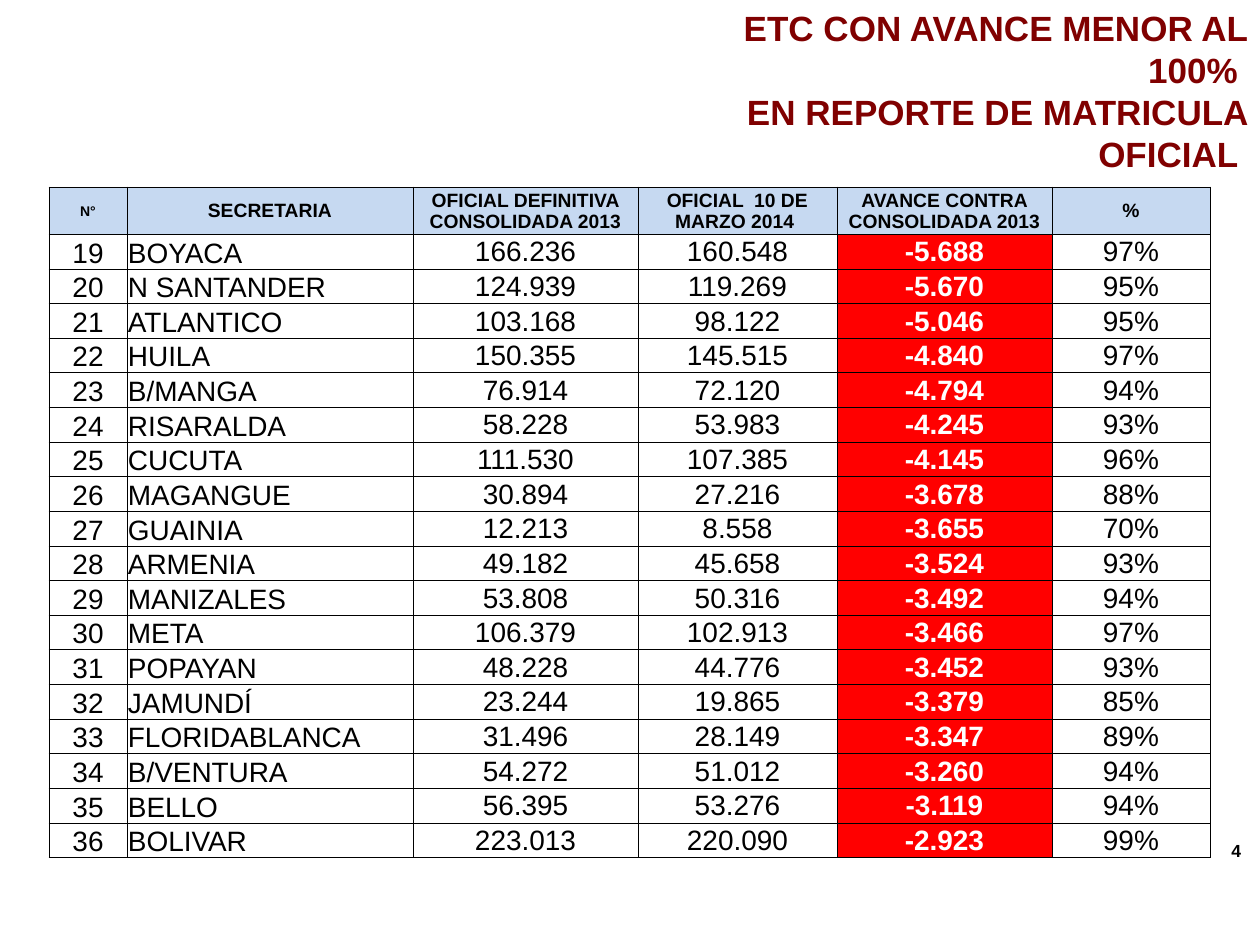
from lxml.etree import SubElement
from pptx import Presentation
from pptx.dml.color import RGBColor
from pptx.enum.text import MSO_ANCHOR, MSO_AUTO_SIZE, PP_ALIGN
from pptx.oxml.ns import qn
from pptx.util import Pt

TITLE = ["ETC CON AVANCE MENOR AL 100% ", "EN REPORTE DE MATRICULA OFICIAL "]
PAGE_NUMBER = "4 "
HEADERS = ["N°", "SECRETARIA", "OFICIAL DEFINITIVA CONSOLIDADA 2013",
           "OFICIAL  10 DE MARZO 2014 ", "AVANCE CONTRA CONSOLIDADA 2013", "%"]
FIRST_NUMBER = 19
SECRETARIES = [
    ("BOYACA", "166.236", "160.548", "-5.688", "97%"),
    ("N SANTANDER", "124.939", "119.269", "-5.670", "95%"),
    ("ATLANTICO", "103.168", "98.122", "-5.046", "95%"),
    ("HUILA", "150.355", "145.515", "-4.840", "97%"),
    ("B/MANGA", "76.914", "72.120", "-4.794", "94%"),
    ("RISARALDA", "58.228", "53.983", "-4.245", "93%"),
    ("CUCUTA", "111.530", "107.385", "-4.145", "96%"),
    ("MAGANGUE", "30.894", "27.216", "-3.678", "88%"),
    ("GUAINIA", "12.213", "8.558", "-3.655", "70%"),
    ("ARMENIA", "49.182", "45.658", "-3.524", "93%"),
    ("MANIZALES", "53.808", "50.316", "-3.492", "94%"),
    ("META", "106.379", "102.913", "-3.466", "97%"),
    ("POPAYAN", "48.228", "44.776", "-3.452", "93%"),
    ("JAMUNDÍ", "23.244", "19.865", "-3.379", "85%"),
    ("FLORIDABLANCA", "31.496", "28.149", "-3.347", "89%"),
    ("B/VENTURA", "54.272", "51.012", "-3.260", "94%"),
    ("BELLO", "56.395", "53.276", "-3.119", "94%"),
    ("BOLIVAR", "223.013", "220.090", "-2.923", "99%"),
]
COLORS = {"title": "800000", "text": "000000", "header": "C6D9F1",
          "gap": "FF0000", "gap_text": "FFFFFF", "border": "000000"}
FONT = "Arial"
COLUMN_WIDTHS = [78, 286, 225, 199, 215, 158]
TABLE_LEFT, TABLE_TOP, TABLE_HEIGHT, HEADER_HEIGHT = 49, 187, 670, 47
NUMBER_COLUMN, NAME_COLUMN, GAP_COLUMN = 0, 1, 4


def px(length):
    return round(length * 914400 / 126)


def add_span(para, text, size, color, bold, align):
    para.alignment = align
    span = para.add_run()
    span.text = text
    span.font.name = FONT
    span.font.size = Pt(size)
    span.font.bold = bold
    span.font.color.rgb = RGBColor.from_string(COLORS[color])


def add_box(page, bounds, lines, size, color):
    """Add a bold, right-aligned text box and return its frame."""
    frame = page.shapes.add_textbox(*map(px, bounds)).text_frame
    frame.word_wrap = True
    for index, line in enumerate(lines):
        para = frame.add_paragraph() if index else frame.paragraphs[0]
        add_span(para, line, size, color, True, PP_ALIGN.RIGHT)
    return frame


def add_borders(cell):
    properties = cell._tc.get_or_add_tcPr()
    for side in ("a:lnL", "a:lnR", "a:lnT", "a:lnB"):
        line = SubElement(properties, qn(side), w=str(Pt(0.5)))
        fill = SubElement(line, qn("a:solidFill"))
        SubElement(fill, qn("a:srgbClr"), val=COLORS["border"])


def fill_cell(cell, text, row, column):
    is_header = row == 0
    is_gap = column == GAP_COLUMN and not is_header
    cell.margin_left = cell.margin_right = cell.margin_top = px(1)
    cell.margin_bottom = 0
    at_bottom = column in (NUMBER_COLUMN, NAME_COLUMN) and not is_header
    cell.vertical_anchor = MSO_ANCHOR.BOTTOM if at_bottom else MSO_ANCHOR.MIDDLE
    add_borders(cell)
    if is_header or is_gap:
        cell.fill.solid()
        cell.fill.fore_color.rgb = RGBColor.from_string(COLORS["header" if is_header else "gap"])
    else:
        cell.fill.background()
    size = 16
    if is_header:
        size = 8 if column == NUMBER_COLUMN else 11
    is_name = column == NAME_COLUMN and not is_header
    add_span(cell.text_frame.paragraphs[0], text, size, "gap_text" if is_gap else "text",
             is_header or is_gap, PP_ALIGN.LEFT if is_name else PP_ALIGN.CENTER)


def add_secretary_table(page):
    rows = [HEADERS] + [(str(number), *values)
                        for number, values in enumerate(SECRETARIES, FIRST_NUMBER)]
    table = page.shapes.add_table(len(rows), len(HEADERS), px(TABLE_LEFT), px(TABLE_TOP),
                                  px(sum(COLUMN_WIDTHS)), px(TABLE_HEIGHT)).table
    table.first_row = table.horz_banding = False
    for column, width in zip(table.columns, COLUMN_WIDTHS):
        column.width = px(width)
    body_height = (TABLE_HEIGHT - HEADER_HEIGHT) / len(SECRETARIES)
    for row, values in enumerate(rows):
        table.rows[row].height = px(body_height if row else HEADER_HEIGHT)
        for column, text in enumerate(values):
            fill_cell(table.cell(row, column), text, row, column)


def main():
    deck = Presentation()
    deck.slide_width, deck.slide_height = px(1260), px(945)
    page = deck.slides.add_slide(deck.slide_layouts[6])

    number = add_box(page, (1218, 849, 28, 21), [PAGE_NUMBER], 10, "text")
    number.margin_left = number.margin_right = number.margin_top = 0
    number.margin_bottom = px(18)
    number.vertical_anchor = MSO_ANCHOR.MIDDLE

    title = add_box(page, (648, 0, 612, 183), TITLE, 20, "title")
    title.auto_size = MSO_AUTO_SIZE.SHAPE_TO_FIT_TEXT

    add_secretary_table(page)
    deck.save("out.pptx")


if __name__ == "__main__":
    main()
